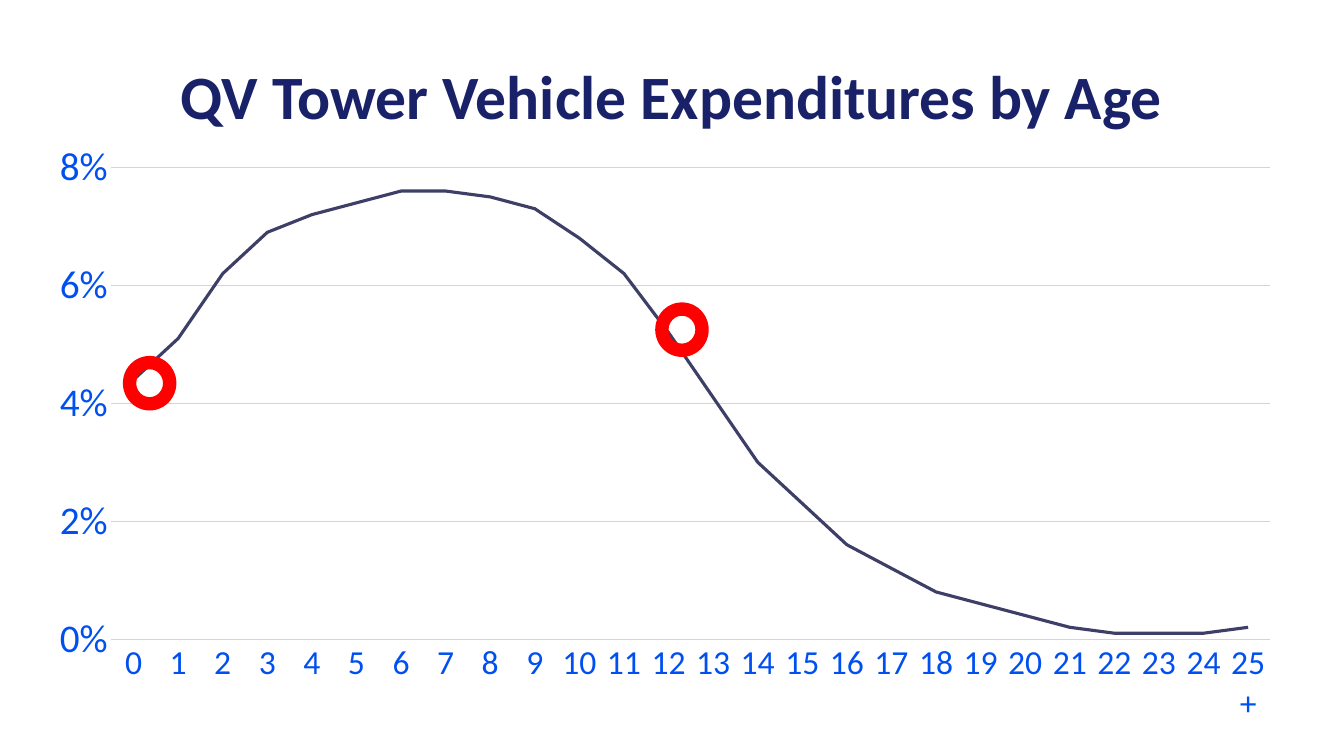
from dataclasses import dataclass

from lxml.etree import SubElement
from pptx import Presentation
from pptx.chart.axis import CategoryAxis, ValueAxis
from pptx.chart.data import CategoryChartData
from pptx.dml.color import RGBColor
from pptx.enum.chart import XL_CHART_TYPE, XL_MARKER_STYLE, XL_TICK_MARK
from pptx.enum.shapes import MSO_SHAPE
from pptx.enum.text import MSO_ANCHOR, PP_ALIGN
from pptx.oxml.ns import qn
from pptx.slide import Slide
from pptx.util import Emu, Pt

FONT = "Calibri"
NAVY = RGBColor(0x19, 0x21, 0x68)
BLUE = RGBColor(0x00, 0x50, 0xF1)
PALE_BLUE = RGBColor(0xC1, 0xD6, 0xFF)
SLATE = RGBColor(0x3E, 0x3F, 0x67)
RED = RGBColor(0xFF, 0x00, 0x00)

AGES = [str(age) for age in range(25)] + ["25+"]
SHARES = [
    0.044, 0.051, 0.062, 0.069, 0.072, 0.074, 0.076, 0.076, 0.075,
    0.073, 0.068, 0.062, 0.052, 0.041, 0.03, 0.023, 0.016, 0.012,
    0.008, 0.006, 0.004, 0.002, 0.001, 0.001, 0.001, 0.002,
]
PLOT_LAYOUT = {"x": 0.06, "y": 0.06, "w": 0.92, "h": 0.78}


@dataclass(frozen=True)
class Ring:
    left: int
    top: int
    width: int = 51
    height: int = 52


RINGS = [Ring(117, 339), Ring(624, 288)]


def px(length: int) -> Emu:
    return Emu(length * 9525)


def add_title(page: Slide, text: str) -> None:
    box = page.shapes.add_textbox(px(52), px(48), px(1176), px(84))
    frame = box.text_frame
    frame.word_wrap = True
    frame.vertical_anchor = MSO_ANCHOR.MIDDLE
    para = frame.paragraphs[0]
    para.text = text
    para.alignment = PP_ALIGN.CENTER
    para.font.name = FONT
    para.font.size = Pt(44)
    para.font.bold = True
    para.font.color.rgb = NAVY


def style_axis(axis: CategoryAxis | ValueAxis, size: int) -> None:
    axis.major_tick_mark = XL_TICK_MARK.NONE
    axis.minor_tick_mark = XL_TICK_MARK.NONE
    font = axis.tick_labels.font
    font.name = FONT
    font.size = Pt(size)
    font.color.rgb = BLUE


def add_expenditure_chart(page: Slide) -> None:
    data = CategoryChartData(number_format="0%")
    data.categories = AGES
    data.add_series("Series 1", SHARES)
    chart = page.shapes.add_chart(
        XL_CHART_TYPE.LINE, px(34), px(125), px(1200), px(576), data
    ).chart
    chart.has_legend = False
    chart.has_title = False
    chart.font.name = FONT
    chart.font.size = Pt(10)

    # Axes and gridlines
    ages = chart.category_axis
    style_axis(ages, 24)
    shares = chart.value_axis
    style_axis(shares, 28)
    shares.minimum_scale = 0
    shares.maximum_scale = 0.08
    shares.major_unit = 0.02
    shares.tick_labels.number_format = "0%"
    shares.tick_labels.number_format_is_linked = False
    shares.format.line.fill.background()
    for line in (ages.format.line, shares.major_gridlines.format.line):
        line.color.rgb = PALE_BLUE
        line.width = Pt(0.75)

    # Expenditure curve
    plot = chart.plots[0]
    plot.vary_by_categories = False
    curve = plot.series[0]
    curve.smooth = False
    curve.marker.style = XL_MARKER_STYLE.NONE
    curve.format.line.color.rgb = SLATE
    curve.format.line.width = Pt(2.25)

    # Inner plot area as fractions of the chart
    area = chart.element.find(".//" + qn("c:plotArea"))
    for old_layout in area.findall(qn("c:layout")):
        area.remove(old_layout)
    layout = SubElement(area, qn("c:layout"))
    area.insert(0, layout)
    manual = SubElement(layout, qn("c:manualLayout"))
    settings = {"layoutTarget": "inner", "xMode": "edge", "yMode": "edge"}
    for tag, value in (settings | PLOT_LAYOUT).items():
        SubElement(manual, qn(f"c:{tag}")).set("val", str(value))


def add_ring(page: Slide, ring: Ring) -> None:
    shape = page.shapes.add_shape(
        MSO_SHAPE.DONUT, px(ring.left), px(ring.top), px(ring.width), px(ring.height)
    )
    shape.shadow.inherit = False
    shape.fill.solid()
    shape.fill.fore_color.rgb = RED
    shape.line.fill.background()


def main() -> None:
    deck = Presentation()
    deck.slide_width, deck.slide_height = px(1280), px(720)
    page = deck.slides.add_slide(deck.slide_layouts[6])
    add_title(page, "QV Tower Vehicle Expenditures by Age")
    add_expenditure_chart(page)
    for ring in RINGS:
        add_ring(page, ring)
    deck.save("out.pptx")


if __name__ == "__main__":
    main()
